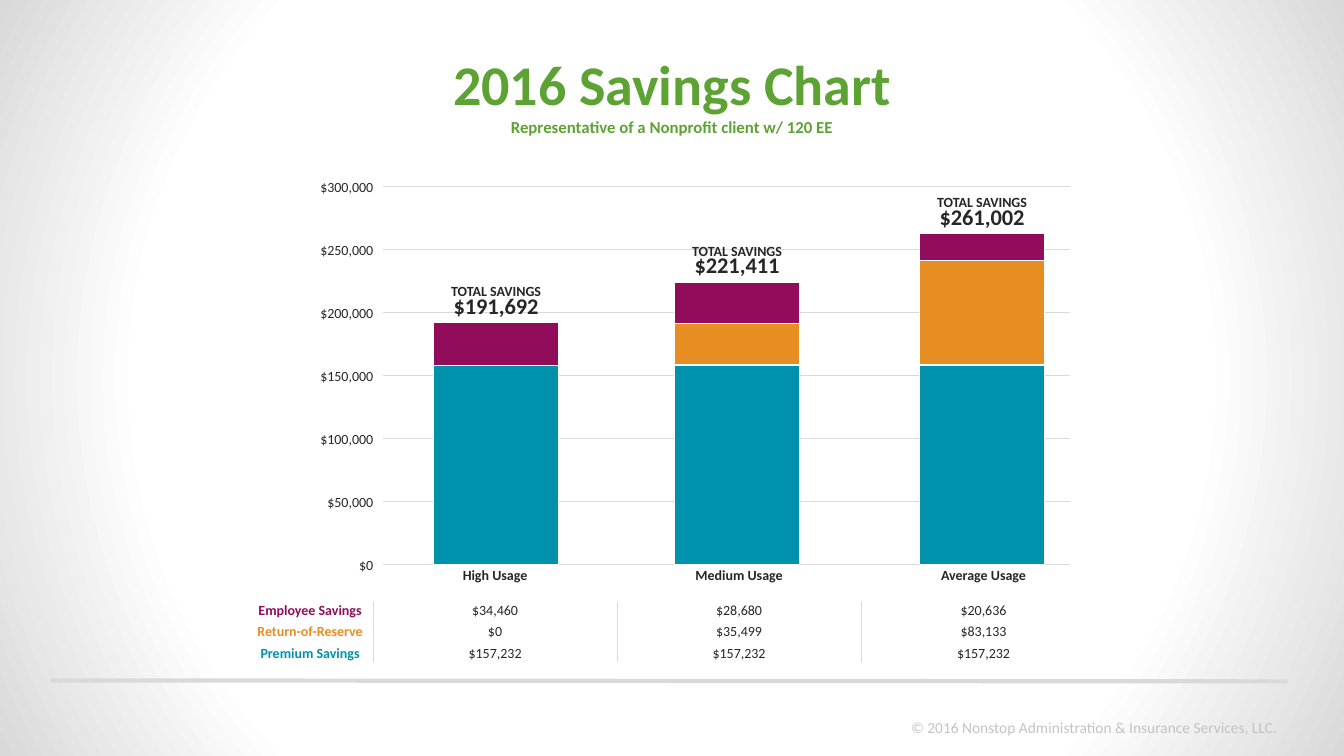
from lxml import etree
from pptx import Presentation
from pptx.dml.color import RGBColor
from pptx.enum.shapes import MSO_CONNECTOR, MSO_SHAPE
from pptx.enum.text import MSO_ANCHOR as Anchor, MSO_AUTO_SIZE as AutoSize, PP_ALIGN as Align
from pptx.oxml import parse_xml
from pptx.oxml.ns import nsdecls, qn
from pptx.util import Inches, Pt

GREEN = RGBColor(0x5D, 0xA3, 0x34)
INK = RGBColor(0x26, 0x26, 0x26)
PLUM = RGBColor(0x91, 0x0C, 0x5A)
ORANGE = RGBColor(0xE7, 0x8E, 0x23)
TEAL = RGBColor(0x00, 0x91, 0xAC)
RULE_GREY = RGBColor(0xD9, 0xD9, 0xD9)
FOOTER_GREY = RGBColor(0xC3, 0xC3, 0xC3)
WHITE = RGBColor(0xFF, 0xFF, 0xFF)
FONT = "Calibri"
NO_TABLE_STYLE = "{2D5ABB26-0587-4C30-8999-92F81FD0307C}"

SLIDE_W, SLIDE_H = 13.33, 7.5
BAR_W = 1.24
GRID_STEP = 0.625
# left edge, total, and (height, colour) of each segment from the bottom up
BARS = [
    (4.3, "$191,692", [(1.98, TEAL), (0.42, PLUM)]),
    (6.69, "$221,411", [(1.98, TEAL), (0.41, ORANGE), (0.41, PLUM)]),
    (9.12, "$261,002", [(1.98, TEAL), (1.04, ORANGE), (0.26, PLUM)]),
]
COLUMN_WIDTHS = [1.25, 2.42, 2.42, 2.43]
USAGES = ["", "High Usage", "Medium Usage", "Average Usage"]
# top, height, colour and cells
SAVINGS_ROWS = [
    (5.97, 0.17, PLUM, ["Employee Savings", "$34,460", "$28,680", "$20,636"]),
    (6.14, 0.26, ORANGE, ["Return-of-Reserve", "$0", "$35,499", "$83,133"]),
    (6.4, 0.17, TEAL, ["Premium Savings", "$157,232", "$157,232", "$157,232"]),
]


def add_text(paragraph, text, size, color, bold=False, align=Align.CENTER):
    paragraph.alignment = align
    run = paragraph.add_run()
    run.text = text
    font = run.font
    font.name, font.size, font.bold = FONT, Pt(size), bold
    font.color.rgb = color


def add_box(slide, left, top, width, height):
    box = slide.shapes.add_textbox(*map(Inches, (left, top, width, height)))
    frame = box.text_frame
    frame.word_wrap = True
    frame.auto_size = AutoSize.SHAPE_TO_FIT_TEXT
    return frame


def next_paragraph(frame, index):
    return frame.add_paragraph() if index else frame.paragraphs[0]


def add_rect(slide, left, top, width, height):
    rect = slide.shapes.add_shape(
        MSO_SHAPE.RECTANGLE, *map(Inches, (left, top, width, height)))
    rect.shadow.inherit = False
    return rect


def add_rule(slide, left, top, right, bottom, weight):
    rule = slide.shapes.add_connector(
        MSO_CONNECTOR.STRAIGHT, *map(Inches, (left, top, right, bottom)))
    rule.line.color.rgb = RULE_GREY
    rule.line.width = Pt(weight)
    etree.SubElement(rule._element.spPr, qn("a:effectLst"))


def add_backdrop(slide):
    """Cover the slide with a white-to-grey vignette behind everything else."""
    vignette = add_rect(slide, 0, 0, SLIDE_W, SLIDE_H)
    vignette.line.fill.background()
    properties = vignette._element.spPr
    properties.replace(properties.find(qn("a:ln")).getprevious(), parse_xml(
        f'<a:prstGeom {nsdecls("a")} prst="rect"><a:avLst/></a:prstGeom>'))
    properties.find(qn("a:ln")).addprevious(parse_xml(
        f'<a:gradFill {nsdecls("a")} rotWithShape="1"><a:gsLst>'
        f'<a:gs pos="69000"><a:srgbClr val="{WHITE}"/></a:gs>'
        f'<a:gs pos="100000"><a:srgbClr val="{RULE_GREY}"/></a:gs></a:gsLst>'
        '<a:path path="circle">'
        '<a:fillToRect l="50000" t="50000" r="50000" b="50000"/>'
        '</a:path></a:gradFill>'))
    slide.shapes._spTree.insert(2, vignette._element)


def add_footer(slide, left, top, width, height):
    add_rule(slide, 0.5, 6.75, 12.77, 6.76, 3)
    frame = add_box(slide, left, top, width, height)
    add_text(frame.paragraphs[0],
             "© 2016 Nonstop Administration & Insurance Services, LLC.",
             11, FOOTER_GREY, align=Align.RIGHT)


def fill_title(slide, left, top, width, height):
    title = slide.shapes.title
    title.left, title.top, title.width, title.height = map(
        Inches, (left, top, width, height))
    frame = title.text_frame
    frame.auto_size = AutoSize.NONE
    frame.vertical_anchor = Anchor.MIDDLE
    lines = [("2016 Savings Chart", 40),
             ("Representative of a Nonprofit client w/ 120 EE", 12)]
    for index, (text, size) in enumerate(lines):
        add_text(next_paragraph(frame, index), text, size, GREEN, bold=True)


def add_axis(slide, left, top, right):
    """Draw the dollar labels and gridlines; top is the $300,000 line."""
    frame = add_box(slide, left - 0.96, top - 0.13, 0.96, 4.06)
    for index, dollars in enumerate(range(300_000, -1, -50_000)):
        amount = next_paragraph(frame, index)
        amount.space_after = Pt(33)
        add_text(amount, f"${dollars:,}", 10, INK, align=Align.RIGHT)
        level = top + index * GRID_STEP
        add_rule(slide, left, level, right, level, 0.5)


def add_bar(slide, left, base, total, segments):
    """Stack the segments up from base and put the total above them."""
    top = base
    for height, color in segments:
        top -= height
        segment = add_rect(slide, left, top, BAR_W, height)
        segment.fill.solid()
        segment.fill.fore_color.rgb = color
        segment.line.color.rgb = WHITE
        segment.line.width = Pt(0.5)
    frame = add_box(slide, left, top - 0.4, BAR_W, 0.42)
    for index, (text, size) in enumerate([("TOTAL SAVINGS", 10), (total, 16)]):
        line = next_paragraph(frame, index)
        line.line_spacing = 0.7
        add_text(line, text, size, INK, bold=True)


def add_cell_border(cell, side):
    cell._tc.get_or_add_tcPr().append(parse_xml(
        f'<a:{side} {nsdecls("a")} w="6350"><a:solidFill>'
        f'<a:srgbClr val="{RULE_GREY}"/></a:solidFill></a:{side}>'))


def add_row(slide, left, top, height, texts, styles, ruled):
    """Add a one-row table; styles gives (colour, bold) for each cell."""
    table = slide.shapes.add_table(
        1, len(texts), *map(Inches, (left, top, sum(COLUMN_WIDTHS), height))).table
    table.first_row = table.horz_banding = False
    table._tbl.tblPr.find(qn("a:tableStyleId")).text = NO_TABLE_STYLE
    last = len(texts) - 1
    for index, (text, (color, bold)) in enumerate(zip(texts, styles)):
        table.columns[index].width = Inches(COLUMN_WIDTHS[index])
        cell = table.cell(0, index)
        cell.margin_top = cell.margin_bottom = 0
        cell.margin_left = cell.margin_right = Inches(0.1 if index else 0.05)
        cell.vertical_anchor = Anchor.MIDDLE
        if ruled and index > 0:
            add_cell_border(cell, "lnL")
        if ruled and index < last:
            add_cell_border(cell, "lnR")
        cell.fill.background()
        paragraph = cell.text_frame.paragraphs[0]
        if text:
            add_text(paragraph, text, 10, color, bold)
        else:
            etree.SubElement(paragraph._p, qn("a:endParaRPr"), sz="1000")


def add_savings_tables(slide, left):
    add_row(slide, left, 5.63, 0.17, USAGES, [(INK, True)] * 4, ruled=False)
    for top, height, color, texts in SAVINGS_ROWS:
        styles = [(color, True)] + [(INK, False)] * 3
        add_row(slide, left, top, height, texts, styles, ruled=True)


def main():
    deck = Presentation()
    deck.slide_width, deck.slide_height = Inches(SLIDE_W), Inches(SLIDE_H)
    slide = deck.slides.add_slide(deck.slide_layouts[5])
    add_backdrop(slide)
    add_footer(slide, 6.07, 7.07, 6.7, 0.29)
    fill_title(slide, 0, 0.3, SLIDE_W, 1.25)
    add_axis(slide, 3.8, 1.85, 10.61)
    for left, total, segments in BARS:
        add_bar(slide, left, 5.6, total, segments)
    add_savings_tables(slide, 2.45)
    deck.save("out.pptx")


if __name__ == "__main__":
    main()
